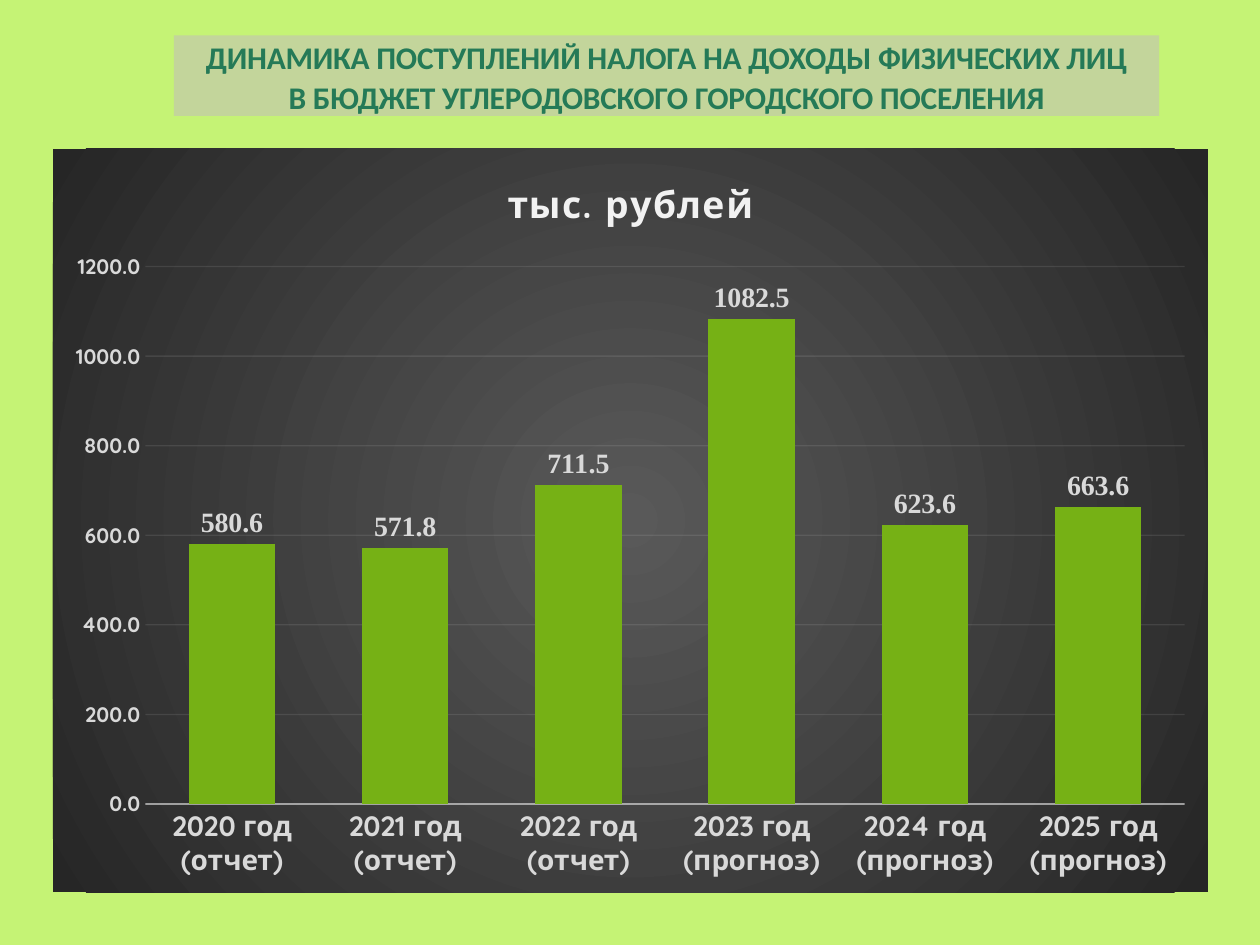
from pptx import Presentation
from pptx.chart.data import CategoryChartData
from pptx.dml.color import RGBColor
from pptx.enum.chart import XL_CHART_TYPE, XL_LABEL_POSITION, XL_TICK_MARK
from pptx.enum.shapes import MSO_SHAPE
from pptx.enum.text import MSO_ANCHOR, PP_ALIGN
from pptx.oxml import parse_xml
from pptx.oxml.ns import nsdecls
from pptx.util import Pt


def tint(code):
    return RGBColor.from_string(code)


def write(par, text, size=18, color="257A57", face="Calibri", space=0):
    run = par.add_run()
    run.text = text
    run.font.size = Pt(size)
    run.font.bold = True
    run.font.name = face
    run.font.color.rgb = tint(color)
    run.font._element.set("spc", str(space))


deck = Presentation()
deck.slide_width, deck.slide_height = Pt(720), Pt(540)
slide = deck.slides.add_slide(deck.slide_layouts[6])

rects = []
for box, color in [((0, 0, 720, 540), "C5F375"), ((99.4, 20.2, 563, 46), "C3D59B")]:
    rect = slide.shapes.add_shape(MSO_SHAPE.RECTANGLE, *map(Pt, box))
    rect.shadow.inherit = False
    rect.fill.solid()
    rect.fill.fore_color.rgb = tint(color)
    rect.line.fill.background()
    rects.append(rect)

frame = rects[1].text_frame
frame.word_wrap = True
frame.vertical_anchor = MSO_ANCHOR.TOP
frame.margin_left = frame.margin_right = frame.margin_bottom = 0
frame.margin_top = Pt(1)
lines = [
    "ДИНАМИКА ПОСТУПЛЕНИЙ НАЛОГА НА ДОХОДЫ ФИЗИЧЕСКИХ ЛИЦ",
    "В БЮДЖЕТ УГЛЕРОДОВСКОГО ГОРОДСКОГО ПОСЕЛЕНИЯ",
]
for i, line in enumerate(lines):
    par = frame.add_paragraph() if i else frame.paragraphs[0]
    par.alignment = PP_ALIGN.CENTER
    par.line_spacing = 1.02
    if i:
        par.space_before = Pt(0.7)
    write(par, line, space=-15)

sums = {
    "2020 год (отчет)": 580.6,
    "2021 год (отчет)": 571.8,
    "2022 год (отчет)": 711.5,
    "2023 год (прогноз)": 1082.5,
    "2024 год (прогноз)": 623.6,
    "2025 год (прогноз)": 663.6,
}
data = CategoryChartData(number_format="0.0")
data.categories = list(sums)
data.add_series("тыс. рублей", list(sums.values()))
chart = slide.shapes.add_chart(
    XL_CHART_TYPE.COLUMN_CLUSTERED, Pt(30.2), Pt(85), Pt(660), Pt(424.8), data
).chart
chart.has_legend = False
chart.font.size = Pt(10)
chart.font.name = "Quicksand"
chart.font.color.rgb = tint("FFFFFF")
chart.has_title = True
chart.chart_title.include_in_layout = False
title = chart.chart_title.text_frame.paragraphs[0]
write(title, "тыс. рублей", size=21.3, color="F2F2F2", face="Quicksand", space=100)

plot = chart.plots[0]
plot.gap_width = 100
plot.overlap = -24
plot.vary_by_categories = False
bars = plot.series[0]
bars.invert_if_negative = False
bars.format.fill.solid()
bars.format.fill.fore_color.rgb = tint("76B115")

years, scale = chart.category_axis, chart.value_axis
plot.has_data_labels = True
marks = plot.data_labels
marks.show_value = True
marks.position = XL_LABEL_POSITION.OUTSIDE_END
marks.number_format = "0.0"
marks.number_format_is_linked = False
fonts = [
    (marks.font, 16, "Times New Roman"),
    (years.tick_labels.font, 16, "Quicksand"),
    (scale.tick_labels.font, 12, "Quicksand"),
]
for font, size, face in fonts:
    font.size = Pt(size)
    font.bold = True
    font.name = face
    font.color.rgb = tint("D9D9D9")

for axis in (years, scale):
    axis.major_tick_mark = axis.minor_tick_mark = XL_TICK_MARK.NONE
scale.minimum_scale, scale.maximum_scale, scale.major_unit = 0, 1200, 200
scale.tick_labels.number_format = "0.0"
scale.tick_labels.number_format_is_linked = False
scale.format.line.fill.background()
for rule, width, alpha in [
    (years.format.line, 1, 54),
    (scale.major_gridlines.format.line, 0.75, 10),
]:
    rule.width = Pt(width)
    rule.color.rgb = tint("F2F2F2")
    shade = rule._ln.find(".//{*}srgbClr")
    shade.append(parse_xml(f'<a:alpha {nsdecls("a")} val="{alpha * 1000}"/>'))

back = parse_xml(
    f'<c:spPr {nsdecls("c", "a")}><a:gradFill><a:gsLst>'
    '<a:gs pos="0"><a:srgbClr val="595959"/></a:gs>'
    '<a:gs pos="100000"><a:srgbClr val="262626"/></a:gs></a:gsLst>'
    '<a:path path="circle"><a:fillToRect l="50000" t="50000" r="50000" b="50000"/></a:path>'
    "</a:gradFill><a:ln><a:noFill/></a:ln></c:spPr>"
)
chart._chartSpace.find("{*}txPr").addprevious(back)

deck.save("out.pptx")
